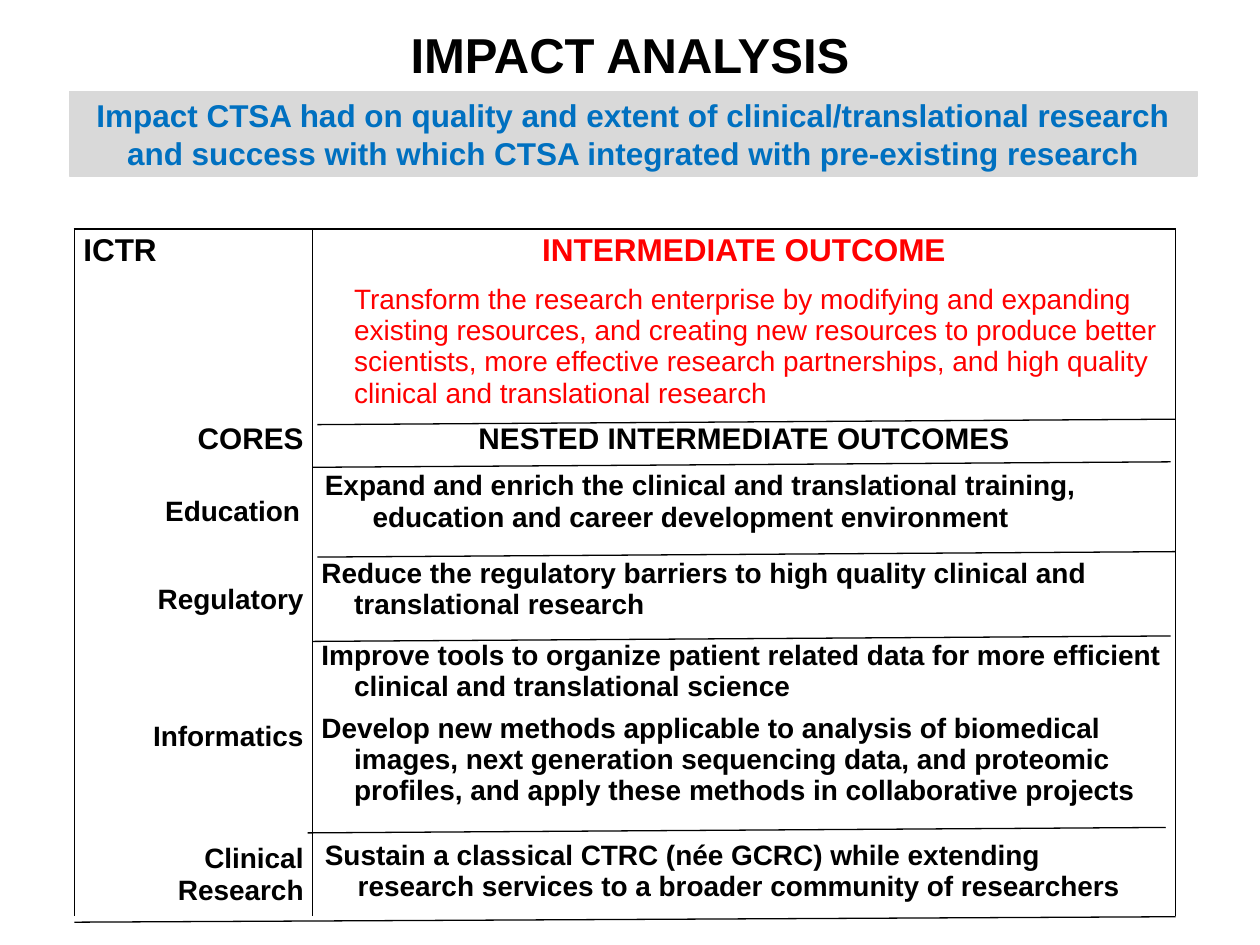
from lxml import etree
from pptx import Presentation
from pptx.dml.color import RGBColor
from pptx.enum import shapes, text
from pptx.oxml.ns import qn
from pptx.util import Cm, Pt

COLORS = {"black": "000000", "red": "FF0000", "blue": "0070C0", "grey": "D9D9D9"}
LEFT, CENTER, RIGHT = text.PP_ALIGN.LEFT, text.PP_ALIGN.CENTER, text.PP_ALIGN.RIGHT
TOP, MIDDLE = text.MSO_ANCHOR.TOP, text.MSO_ANCHOR.MIDDLE
TIGHT, ROOMY = (0.18, 0), (0.25, 0.13)  # cell margins: sides, top and bottom

TITLE = "IMPACT ANALYSIS"
QUESTION = ("Impact CTSA had on quality and extent of clinical/translational research "
            "and success with which CTSA integrated with pre-existing research")
GOAL = ("Transform the research enterprise by modifying and expanding existing resources, "
        "and creating new resources to produce better scientists, more effective research "
        "partnerships, and high quality clinical and translational research")


def cell(*lines, size=16, bold=True, color="black", align=LEFT, anchor=MIDDLE,
         margins=TIGHT, indent=0, hang=0, after=0):
    return dict(lines=lines, size=size, bold=bold, color=color, align=align,
                anchor=anchor, margins=margins, indent=indent, hang=hang, after=after)


def core(name, margins=TIGHT):
    return cell(name, align=RIGHT, margins=margins)


def outcomes(*lines, margins=TIGHT, indent=0.66):
    return cell(*lines, anchor=TOP, margins=margins, indent=indent, hang=indent, after=6)


EMPTY = cell("", size=1)
# Row height, left cell, right cell
ROWS = [
    (0.86, cell("ICTR", size=18),
     cell("INTERMEDIATE OUTCOME", size=18, color="red", align=CENTER)),
    (0.25, EMPTY, EMPTY),
    (2.52, EMPTY, cell(GOAL, bold=False, color="red", indent=0.66)),
    (0.25, EMPTY, EMPTY),
    (0.71, cell("CORES", size=17, align=RIGHT),
     cell("NESTED INTERMEDIATE OUTCOMES", size=17, align=CENTER)),
    (0.15, EMPTY, EMPTY),
    (1.9, core("Education", ROOMY),
     outcomes("Expand and enrich the clinical and translational training, "
              "education and career development environment", margins=ROOMY, indent=0.96)),
    (1.65, core("Regulatory"),
     outcomes("Reduce the regulatory barriers to high quality clinical and "
              "translational research")),
    (3.9, core("Informatics"),
     outcomes("Improve tools to organize patient related data for more efficient "
              "clinical and translational science",
              "Develop new methods applicable to analysis of biomedical images, next "
              "generation sequencing data, and proteomic profiles, and apply these "
              "methods in collaborative projects")),
    (1.65, core("Clinical Research"),
     outcomes("Sustain a classical CTRC (née GCRC) while extending research services "
              "to a broader community of researchers", margins=ROOMY)),
]
TABLE_LEFT, TABLE_TOP = 1.5, 4.62
COLUMNS = (4.8, 17.4)

# Row rules: left end, its height on the slide, width; each rises to the right
RULE_RISE = 0.11
RULES = [(6.4, 8.56, 17.3), (6.3, 9.42, 17.3), (6.4, 11.23, 17.3),
         (6.3, 12.93, 17.3), (6.2, 16.79, 17.3), (1.5, 18.59, sum(COLUMNS))]


def rgb(color):
    return RGBColor.from_string(COLORS[color])


def style(paragraph, size, color, bold=True, align=CENTER):
    paragraph.alignment = align
    for run in paragraph.runs:
        run.font.name = "Arial"
        run.font.size = Pt(size)
        run.font.bold = bold
        run.font.color.rgb = rgb(color)


def set_borders(table_cell, drawn):
    properties = table_cell._tc.get_or_add_tcPr()
    for place, side in enumerate("LRTB"):
        border = etree.Element(qn("a:ln" + side), w=str(Pt(1)))
        if side in drawn:
            fill = etree.SubElement(border, qn("a:solidFill"))
            etree.SubElement(fill, qn("a:srgbClr"), val=COLORS["black"])
        else:
            etree.SubElement(border, qn("a:noFill"))
        properties.insert(place, border)


def fill_cell(table_cell, content):
    side, edge = content["margins"]
    table_cell.margin_left = table_cell.margin_right = Cm(side)
    table_cell.margin_top = table_cell.margin_bottom = Cm(edge)
    table_cell.vertical_anchor = content["anchor"]
    table_cell.fill.background()
    table_cell.text_frame.text = "\n".join(content["lines"])
    for paragraph in table_cell.text_frame.paragraphs:
        style(paragraph, content["size"], content["color"], content["bold"], content["align"])
        paragraph.space_after = Pt(content["after"])
        layout = paragraph._p.get_or_add_pPr()
        layout.set("marL", str(Cm(content["indent"])))
        layout.set("indent", str(-Cm(content["hang"])))
        if not paragraph.runs:  # keeps the spacer rows low
            etree.SubElement(paragraph._p, qn("a:endParaRPr"), sz=str(content["size"] * 100))


def add_outcome_table(slide):
    heights = [row[0] for row in ROWS]
    table = slide.shapes.add_table(len(ROWS), len(COLUMNS), Cm(TABLE_LEFT), Cm(TABLE_TOP),
                                   Cm(sum(COLUMNS)), Cm(sum(heights))).table
    table.first_row = table.horz_banding = False
    for column, width in zip(table.columns, COLUMNS):
        column.width = Cm(width)
    for r, (height, *contents) in enumerate(ROWS):
        table.rows[r].height = Cm(height)
        for c, content in enumerate(contents):
            fill_cell(table.cell(r, c), content)
            set_borders(table.cell(r, c), "LRT" if r == 0 else "LR")


def add_rule(slide, left, y, width):
    rule = slide.shapes.add_connector(shapes.MSO_CONNECTOR.STRAIGHT, Cm(left), Cm(y),
                                      Cm(left + width), Cm(y - RULE_RISE))
    rule.line.color.rgb = rgb("black")
    rule.line.width = Pt(0.75)
    etree.SubElement(rule._element.spPr, qn("a:effectLst"))


def main():
    deck = Presentation()
    deck.slide_width, deck.slide_height = Cm(25.4), Cm(19.05)
    slide = deck.slides.add_slide(deck.slide_layouts[6])

    # Table and its slanted row rules
    add_outcome_table(slide)
    for rule in RULES:
        add_rule(slide, *rule)

    # Title
    title = slide.shapes.add_textbox(0, Cm(0.36), deck.slide_width, Cm(1.45)).text_frame
    title.word_wrap = True
    title.text = TITLE
    style(title.paragraphs[0], 28, "black")

    # Question banner
    banner = slide.shapes.add_shape(shapes.MSO_SHAPE.RECTANGLE,
                                    Cm(1.4), Cm(1.85), Cm(22.73), Cm(1.7))
    banner.shadow.inherit = False
    banner.fill.solid()
    banner.fill.fore_color.rgb = banner.line.color.rgb = rgb("grey")
    banner.line.width = Pt(0.75)
    banner.text_frame.word_wrap = True
    banner.text_frame.vertical_anchor = MIDDLE
    banner.text_frame.text = QUESTION
    style(banner.text_frame.paragraphs[0], 18, "blue")

    deck.save("out.pptx")


if __name__ == "__main__":
    main()
